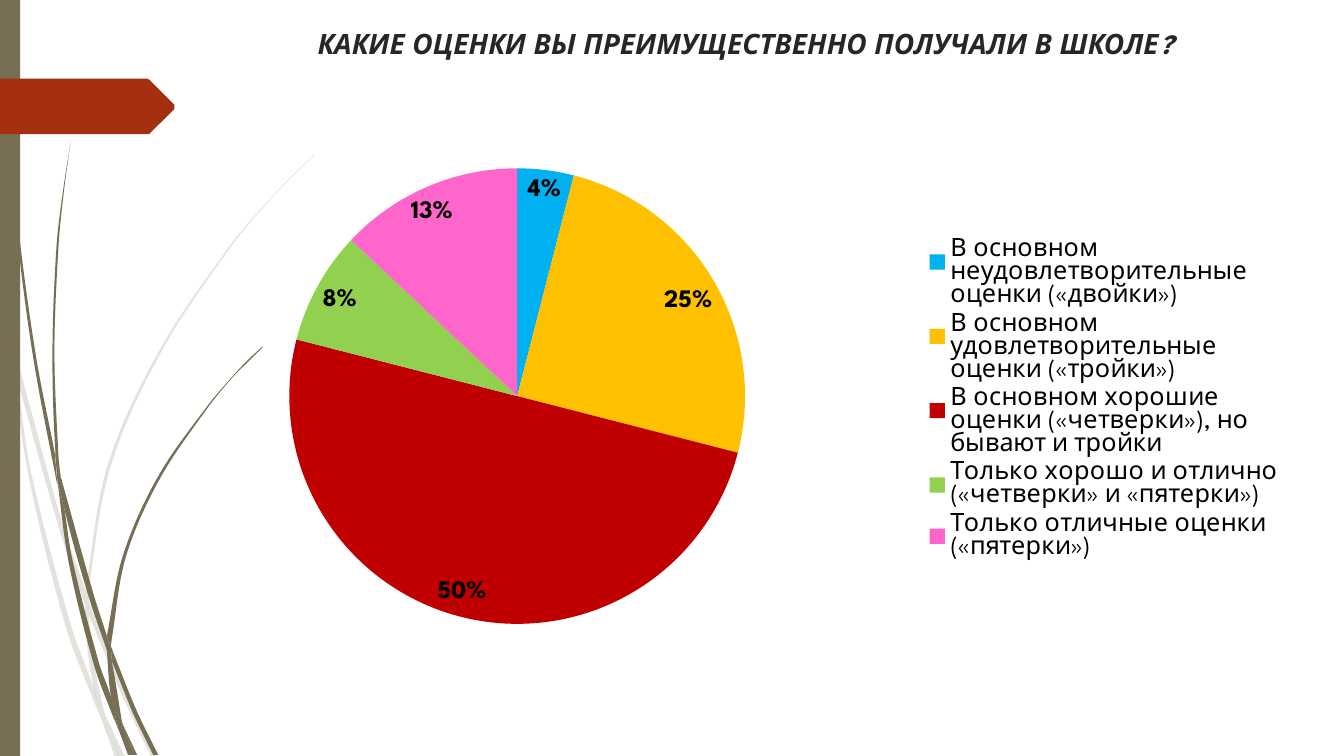
import math
from dataclasses import dataclass

import pptx
import pptx.chart.data
import pptx.dml.color
import pptx.enum.chart
import pptx.enum.shapes
import pptx.enum.text
import pptx.oxml
import pptx.oxml.ns
import pptx.util
from lxml import etree


@dataclass(frozen=True)
class Theme:
    font: str = "League Spartan"
    olive: str = "766F54"
    rust: str = "A53010"
    heading: str = "262626"
    black: str = "000000"
    slices: tuple = ("00B0F0", "FFC000", "C00000", "92D050", "FF66CC")
    heading_size: int = 20
    chart_size: int = 18
    pale_alpha: int = 20


PX = 9144  # one hundredth of an inch


def bend_controls(edge):
    """Give the two control points of each segment of a smooth curve through the edge."""
    ends = [edge[0], *edge, edge[-1]]
    slopes = []
    for before, after in zip(ends, ends[2:]):
        reach = math.dist(before, after) or 1
        slopes.append([(b - a) / reach for a, b in zip(before, after)])
    for start, end, leave, arrive in zip(edge, edge[1:], slopes, slopes[1:]):
        third = math.dist(start, end) / 3
        yield ([a + third * u for a, u in zip(start, leave)],
               [b - third * v for b, v in zip(end, arrive)])


class SlideMaker:
    def __init__(self, theme, width, height):
        self.theme = theme
        self.deck = pptx.Presentation()
        self.deck.slide_width, self.deck.slide_height = width * PX, height * PX
        self.slide = self.deck.slides.add_slide(self.deck.slide_layouts[6])

    def paint(self, shape, color, alpha=None):
        shape.shadow.inherit = False
        shape.fill.solid()
        shape.fill.fore_color.rgb = pptx.dml.color.RGBColor.from_string(color)
        shape.line.fill.background()
        if alpha is not None:
            tone = shape.fill._xPr.find(".//" + pptx.oxml.ns.qn("a:srgbClr"))
            etree.SubElement(tone, pptx.oxml.ns.qn("a:alpha")).set("val", str(alpha * 1000))

    def style_font(self, font, size, color, bold=False, italic=False):
        font.name, font.size = self.theme.font, pptx.util.Pt(size)
        font.bold, font.italic = bold, italic
        font.color.rgb = pptx.dml.color.RGBColor.from_string(color)

    def bar(self, left, top, width, height, color):
        bar = self.slide.shapes.add_shape(
            pptx.enum.shapes.MSO_SHAPE.RECTANGLE, *(n * PX for n in (left, top, width, height)))
        self.paint(bar, color)

    def outline(self, points, color, alpha=None, shapes=None):
        builder = (shapes or self.slide.shapes).build_freeform(*points[0], scale=PX)
        builder.add_line_segments(points[1:], close=True)
        shape = builder.convert_to_shape()
        self.paint(shape, color, alpha)
        return shape

    def grass(self, blades, color, alpha=None):
        tuft = self.slide.shapes.add_group_shape()
        for edges in blades:
            points = [point for edge in edges for point in edge]
            self.bend(self.outline(points, color, alpha, tuft.shapes), edges, points)

    def bend(self, blade, edges, points):
        """Turn the straight segments within each edge into curves."""
        qn = pptx.oxml.ns.qn
        segments = iter(blade._element.findall(".//" + qn("a:lnTo")))
        left, top = (min(axis) for axis in zip(*points))
        for index, edge in enumerate(edges):
            if index:
                next(segments)
            for controls in bend_controls(edge):
                segment = next(segments)
                segment.tag = qn("a:cubicBezTo")
                for place, (x, y) in enumerate(controls):
                    control = etree.Element(qn("a:pt"))
                    control.set("x", str(round((x - left) * PX)))
                    control.set("y", str(round((y - top) * PX)))
                    segment.insert(place, control)
        outline = blade._element.find(".//" + qn("a:path"))
        for size in "wh":
            outline.set(size, str(int(outline.get(size)) * PX))
        for segment in outline:
            target = segment[-1] if len(segment) else None
            if target is not None:
                for axis in "xy":
                    target.set(axis, str(int(target.get(axis)) * PX))

    def heading(self, left, top, width, height, text):
        box = self.slide.shapes.add_textbox(*(n * PX for n in (left, top, width, height)))
        box.text_frame.word_wrap = True
        box.text_frame.text = text
        line = box.text_frame.paragraphs[0]
        line.alignment = pptx.enum.text.PP_ALIGN.CENTER
        self.style_font(line.runs[0].font, self.theme.heading_size, self.theme.heading, True, True)

    def pie(self, left, top, width, height, name, shares, plot_area):
        data = pptx.chart.data.CategoryChartData()
        data.categories = list(shares)
        data.add_series(name, list(shares.values()))
        chart = self.slide.shapes.add_chart(
            pptx.enum.chart.XL_CHART_TYPE.PIE,
            *(n * PX for n in (left, top, width, height)), data).chart
        chart.has_title = False
        self.style_font(chart.font, self.theme.chart_size, self.theme.black)
        chart.has_legend = True
        chart.legend.position = pptx.enum.chart.XL_LEGEND_POSITION.RIGHT
        chart.legend.include_in_layout = False
        pie = chart.plots[0]
        pie.vary_by_categories = True
        for index, color in enumerate(self.theme.slices):
            fill = pie.series[0].points[index].format.fill
            fill.solid()
            fill.fore_color.rgb = pptx.dml.color.RGBColor.from_string(color)
        pie.has_data_labels = True
        labels = pie.data_labels
        labels.show_percentage, labels.show_value = True, False
        labels.number_format, labels.number_format_is_linked = "0%", False
        labels.position = pptx.enum.chart.XL_LABEL_POSITION.BEST_FIT
        self.style_font(labels.font, self.theme.chart_size, self.theme.black, bold=True)
        whole = (width, height, width, height)
        self.place_plot(chart, [part / full for part, full in zip(plot_area, whole)])

    def place_plot(self, chart, fractions):
        qn = pptx.oxml.ns.qn
        plot = chart._chartSpace.find(".//" + qn("c:plotArea"))
        for old in plot.findall(qn("c:layout")):
            plot.remove(old)
        layout = etree.Element(qn("c:layout"))
        plot.insert(0, layout)
        manual = etree.SubElement(layout, qn("c:manualLayout"))
        settings = [("layoutTarget", "inner"), ("xMode", "edge"), ("yMode", "edge"),
                    *zip("xywh", fractions)]
        for tag, value in settings:
            etree.SubElement(manual, qn("c:" + tag)).set("val", str(value))


# Each blade is a list of edges, each edge a list of points along a curve
PALE_BLADES = [
    [[(11, 350), (9, 322), (0, 282)], [(0, 299), (10, 344), (11, 350)]],
    [[(17, 376), (58, 522), (84, 599)], [(85, 586), (62, 520), (14, 345)]],
    [[(88, 610), (123, 694), (150, 751)], [(155, 751), (127, 692), (92, 607), (88, 596)]],
    [[(119, 751), (124, 751)], [(105, 711)]],
    [[(11, 350), (28, 470), (65, 621), (92, 693), (101, 714)],
     [(99, 707), (93, 683), (70, 619), (31, 469), (17, 376)]],
    [[(84, 599), (87, 646), (93, 683), (96, 692), (105, 711)],
     [(103, 706), (91, 646), (88, 610), (88, 608)]],
    [[(88, 596), (88, 584), (110, 462), (160, 349), (229, 245), (268, 198), (290, 175), (312, 154)],
     [(312, 153), (289, 175), (268, 197), (228, 244), (158, 348), (107, 461), (85, 584), (85, 586)]],
    [[(101, 714), (114, 751)], [(119, 751)]],
    [[(88, 608), (88, 610)], [(88, 596), (85, 586)], [(84, 599)]],
    [[(96, 692), (93, 683)], [(99, 707), (101, 714), (119, 751)], [(105, 711)]],
]
DARK_BLADES = [
    [[(3, 0), (3, 48), (7, 110), (17, 233), (33, 355), (56, 477), (57, 481)],
     [(55, 457), (55, 453), (36, 355), (19, 232), (8, 109), (5, 48), (3, 0)]],
    [[(60, 472), (64, 505), (88, 592), (106, 645)], [(106, 633), (106, 631), (93, 590), (60, 472)]],
    [[(110, 641), (111, 656)], [(132, 708), (152, 749)], [(157, 749), (136, 706), (113, 649)]],
    [[(57, 477), (68, 557), (93, 659), (111, 708), (117, 722)],
     [(116, 717), (110, 691), (98, 657), (72, 556), (64, 505)]],
    [[(60, 472), (58, 453), (54, 349), (58, 245), (63, 193), (70, 141)],
     [(70, 141), (62, 193), (56, 245), (52, 349), (55, 449), (60, 472)]],
    [[(133, 749), (136, 749)], [(122, 719)]],
    [[(57, 477), (64, 505)], [(60, 472), (55, 449)], [(55, 453)]],
    [[(110, 641), (111, 633), (125, 552), (158, 476), (205, 406), (231, 374), (246, 359), (261, 344)],
     [(260, 344), (245, 358), (231, 373), (204, 405), (156, 474), (122, 551), (106, 631)]],
    [[(117, 722), (127, 749)], [(131, 749)]],
    [[(106, 645), (110, 691), (116, 706), (122, 719)], [(121, 716), (111, 656), (109, 651)]],
    [[(106, 645), (109, 651), (111, 656)], [(110, 641), (106, 631)]],
    [[(116, 706), (110, 691)], [(116, 717), (117, 722), (130, 749)], [(133, 749), (122, 719)]],
]
RIBBON = [(0, 78), (146, 78), (148, 79), (173, 104), (173, 108), (148, 133), (-1, 133)]
GRADES = {
    "В основном неудовлетворительные оценки («двойки»)": 4,
    "В основном удовлетворительные оценки («тройки»)": 25,
    "В основном хорошие оценки («четверки»), но бывают и тройки": 50,
    "Только хорошо и отлично («четверки» и «пятерки»)": 8,
    "Только отличные оценки («пятерки»)": 13,
}


def main():
    theme = Theme()
    maker = SlideMaker(theme, 1333, 750)
    # Side decoration
    maker.grass(PALE_BLADES, theme.olive, theme.pale_alpha)
    maker.grass(DARK_BLADES, theme.olive)
    maker.bar(0, 0, 20, 750, theme.olive)
    maker.outline(RIBBON, theme.rust)
    # Question and answers
    maker.heading(222, 21, 1034, 63, "КАКИЕ ОЦЕНКИ ВЫ ПРЕИМУЩЕСТВЕННО ПОЛУЧАЛИ В ШКОЛЕ?")
    maker.pie(135, 111, 1149, 570, "Series 1", GRADES, (152, 49, 452, 466))
    maker.deck.save("out.pptx")


if __name__ == "__main__":
    main()
